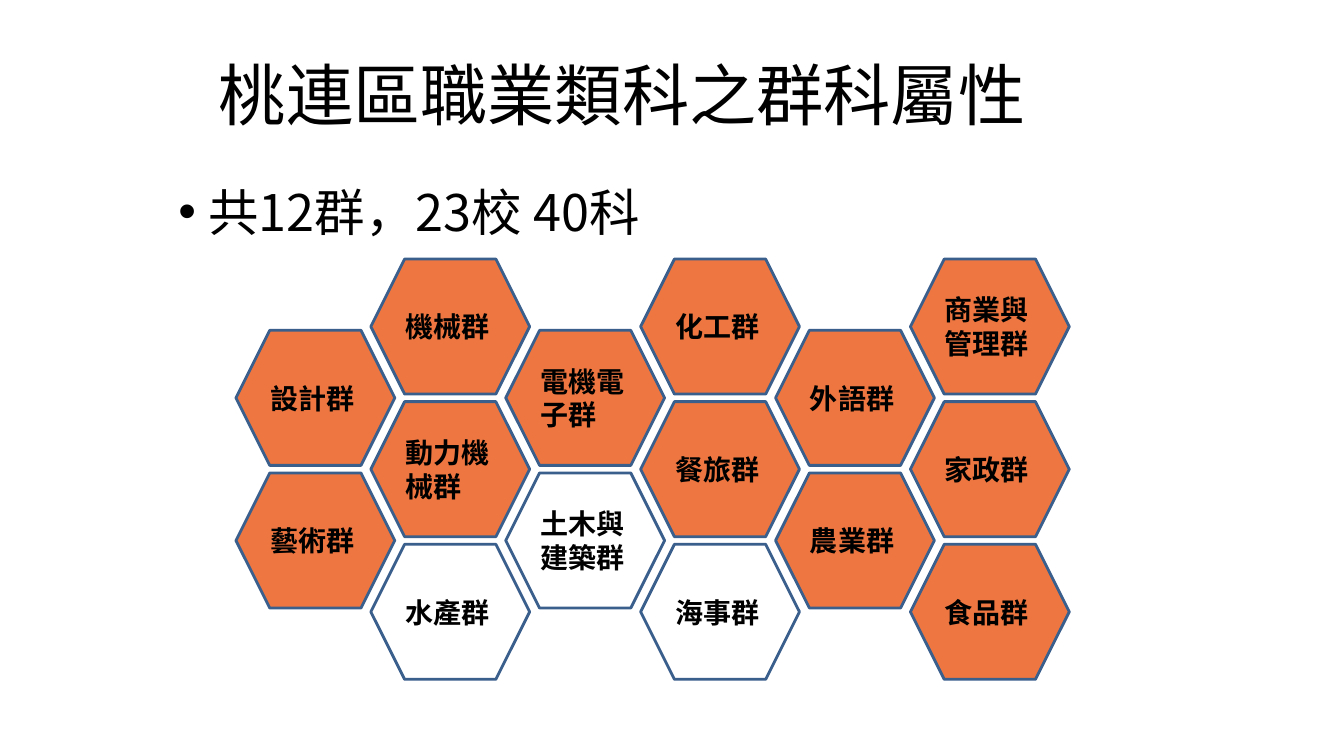
from lxml import etree
from pptx import Presentation
from pptx.dml.color import RGBColor
from pptx.enum.shapes import MSO_SHAPE
from pptx.enum.text import MSO_ANCHOR, PP_ALIGN
from pptx.oxml.ns import qn
from pptx.util import Inches, Pt

COLORS = {"text": "000000", "offered": "EE7640", "outline": "3A5F8C"}
CJK_FONT = "Noto Sans CJK SC"
HEX_W, HEX_H = 1.575, 1.34
LEFT, TOP = 2.34, 2.57
COLUMN_STEP, ROW_STEP = 1.338, 1.415
COLUMNS = [
    ["設計群", "藝術群"],
    ["機械群", "動力機械群", "水產群"],
    ["電機電子群", "土木與建築群"],
    ["化工群", "餐旅群", "海事群"],
    ["外語群", "農業群"],
    ["商業與管理群", "家政群", "食品群"],
]
UNFILLED = {"水產群", "土木與建築群", "海事群"}


def color(name):
    return RGBColor.from_string(COLORS[name])


def write(tf, text, size, font="Calibri", bold=False, align=PP_ALIGN.LEFT):
    tf.word_wrap = True
    tf.vertical_anchor = MSO_ANCHOR.MIDDLE
    p = tf.paragraphs[0]
    p.alignment = align
    r = p.add_run()
    r.text = text
    r.font.name = font
    r.font.size = Pt(size)
    r.font.bold = bold
    r.font.color.rgb = color("text")
    ea = etree.SubElement(r.font._element, qn("a:ea"))
    ea.set("typeface", CJK_FONT)
    return p


def add_title(s, text):
    title = s.shapes.title
    title.left, title.top = Inches(1.67), Inches(0.3)
    title.width, title.height = Inches(9), Inches(1.25)
    write(title.text_frame, text, 48, align=PP_ALIGN.CENTER)


def add_bullet(s, text):
    box = s.shapes.add_textbox(Inches(1.67), Inches(1.78), Inches(8.9), Inches(0.63))
    p = write(box.text_frame, text, 36, font=CJK_FONT)
    pPr = p._p.get_or_add_pPr()
    pPr.set("marL", str(Inches(0.3)))
    pPr.set("indent", str(Inches(-0.3)))
    etree.SubElement(pPr, qn("a:buFont")).set("typeface", "Arial")
    etree.SubElement(pPr, qn("a:buChar")).set("char", "•")


def add_hexagon(s, text, x, y):
    sp = s.shapes.add_shape(MSO_SHAPE.HEXAGON, Inches(x), Inches(y),
                            Inches(HEX_W), Inches(HEX_H))
    sp.shadow.inherit = False
    if text in UNFILLED:
        sp.fill.background()
    else:
        sp.fill.solid()
        sp.fill.fore_color.rgb = color("offered")
    sp.line.color.rgb = color("outline")
    sp.line.width = Pt(2)
    write(sp.text_frame, text, 20, bold=True)


def add_honeycomb(s):
    """Place the columns side by side, the two-cell ones half a row lower."""
    for col, groups in enumerate(COLUMNS):
        top = TOP + (ROW_STEP / 2 if len(groups) == 2 else 0)
        for row, group in enumerate(groups):
            add_hexagon(s, group, LEFT + col * COLUMN_STEP, top + row * ROW_STEP)


def main():
    prs = Presentation()
    prs.slide_width, prs.slide_height = Inches(13.33), Inches(7.5)
    s = prs.slides.add_slide(prs.slide_layouts[5])
    add_title(s, "桃連區職業類科之群科屬性")
    add_bullet(s, "共12群，23校 40科")
    add_honeycomb(s)
    prs.save("out.pptx")


if __name__ == "__main__":
    main()
